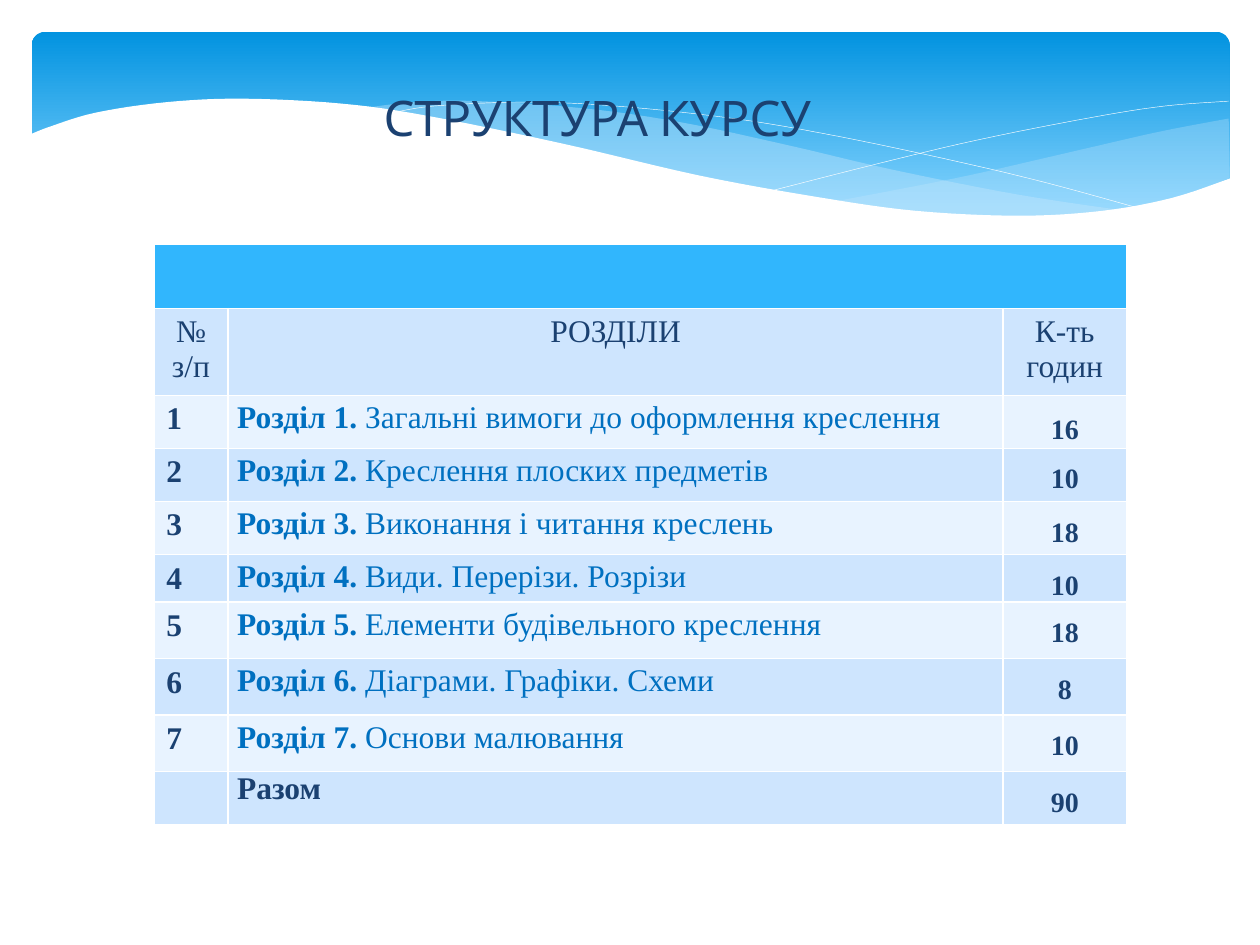
from lxml.etree import SubElement
from pptx import Presentation
from pptx.dml.color import RGBColor
from pptx.enum.shapes import MSO_SHAPE
from pptx.enum.text import MSO_ANCHOR, MSO_AUTO_SIZE, PP_ALIGN
from pptx.oxml.ns import qn
from pptx.util import Cm, Pt

COLORS = {
    "sky_top": "0293E0", "sky_low": "83D3FE", "fold": "C6E7FC", "white": "FFFFFF",
    "header": "31B6FD", "band_dark": "CEE5FE", "band_light": "E8F3FF",
    "navy": "1B4171", "blue": "0070C0",
}
SERIF = "Times New Roman"

RIGHT_FOLD = [
    [(24.13, 1.75), (22.76, 2.01), (21.23, 2.36), (19.15, 2.84), (17.88, 3.1), (16.15, 3.43)],
    [(16.15, 3.43), (17.27, 3.56), (18.59, 3.68), (20.04, 3.73), (21.29, 3.68),
     (22.35, 3.51), (23.29, 3.28), (24.15, 2.95)],
]
LEFT_FOLD = [
    [(22.05, 3.61), (19.86, 3.28), (17.3, 2.77), (15.34, 2.31), (13.11, 1.83),
     (11.18, 1.55), (9.02, 1.4), (7.7, 1.42), (6.63, 1.55)],
    [(6.63, 1.55), (8.05, 1.75), (9.63, 2.06), (11.84, 2.57), (14.2, 3.07),
     (15.88, 3.38), (17.37, 3.58), (19, 3.73), (20.4, 3.76), (22.05, 3.61)],
]
FALLING_LINE = [[(7.21, 1.65), (8.1, 1.5), (9.93, 1.42), (11.79, 1.5), (14.15, 1.75),
                 (16.26, 2.11), (18.67, 2.62), (20.47, 3.05), (22.4, 3.58)]]
RISING_LINE = [[(14.94, 3.2), (17.02, 2.67), (19.08, 2.18), (21.36, 1.73),
                (22.83, 1.5), (24.13, 1.4)]]
WHITE_WAVE = [
    [(24.18, 2.95), (22.99, 3.35), (21.59, 3.61), (19.91, 3.71), (17.81, 3.61),
     (15.82, 3.33), (13.46, 2.9), (10.72, 2.26), (8, 1.7), (6.25, 1.45),
     (4.27, 1.35), (2.72, 1.42), (1.3, 1.63), (0.38, 1.91), (-0.05, 2.08)],
    [(-0.05, 5.05), (24.18, 5.05)],
]

SECTIONS = [
    ("Загальні вимоги до оформлення креслення", 16),
    ("Креслення плоских предметів", 10),
    ("Виконання і читання креслень", 18),
    ("Види. Перерізи. Розрізи", 10),
    ("Елементи будівельного креслення", 18),
    ("Діаграми. Графіки. Схеми", 8),
    ("Основи малювання", 10),
]
COL_WIDTHS = [1.5, 15.62, 2.49]
ROW_HEIGHTS = [1.3, 1.75, 1.07, 1.07, 1.07, 0.95, 1.14, 1.14, 1.14, 1.07]

TIGHT = {"margin_left": Cm(0.18), "margin_right": Cm(0.18), "margin_top": 0, "margin_bottom": 0}
CENTER = {"alignment": PP_ALIGN.CENTER}
TOPIC = {"alignment": PP_ALIGN.JUSTIFY, "line_spacing": 1.15, "space_after": Pt(10)}
HOURS = {"alignment": PP_ALIGN.CENTER, "line_spacing": 1.5}
PLAIN = {"name": SERIF, "size": Pt(18), "bold": False}
BOLD = {**PLAIN, "bold": True}
SMALL = {**BOLD, "size": Pt(16)}


def apply(target, values):
    for name, value in values.items():
        setattr(target, name, value)


def rgb(name):
    return RGBColor.from_string(COLORS[name])


def paint(fill, name):
    fill.solid()
    fill.fore_color.rgb = rgb(name)


def add_run(p, text, font, color="navy"):
    r = p.add_run()
    r.text = text
    apply(r.font, font)
    r.font.color.rgb = rgb(color)


def smooth(points, steps=6):
    ends = [points[0], *points, points[-1]]
    curve = [points[0]]
    for a, b, c, d in zip(ends, ends[1:], ends[2:], ends[3:]):
        for i in range(1, steps + 1):
            t = i / steps
            curve.append(tuple(
                (2 * q + (s - o) * t + (2 * o - 5 * q + 4 * s - u) * t ** 2
                 + (3 * q - o - 3 * s + u) * t ** 3) / 2
                for o, q, s, u in zip(a, b, c, d)))
    return curve


def add_wave(shapes, left, top, edges, closed=True):
    points = [(Cm(left + x), Cm(top + y)) for edge in edges for x, y in smooth(edge)]
    builder = shapes.build_freeform(*points[0])
    builder.add_line_segments(points[1:], close=closed)
    sp = builder.convert_to_shape()
    sp.shadow.inherit = False
    return sp


def add_banner(shapes, left, top, width, height):
    sp = shapes.add_shape(MSO_SHAPE.ROUNDED_RECTANGLE, Cm(left), Cm(top), Cm(width), Cm(height))
    sp.adjustments[0] = 0.07
    sp.shadow.inherit = False
    sp.line.fill.background()
    sp.fill.gradient()
    sp.fill.gradient_angle = 270
    for stop, (position, name) in zip(sp.fill.gradient_stops, [(0, "sky_top"), (0.9, "sky_low")]):
        stop.position = position
        stop.color.rgb = rgb(name)

    for edges, opacity in [(RIGHT_FOLD, 29), (LEFT_FOLD, 40)]:
        fold = add_wave(shapes, left, top, edges)
        paint(fold.fill, "fold")
        fold.line.fill.background()
        color = fold.fill._xPr.find(qn("a:solidFill"))[0]
        SubElement(color, qn("a:alpha"), val=str(opacity * 1000))

    for edges in [FALLING_LINE, RISING_LINE]:
        line = add_wave(shapes, left, top, edges, closed=False)
        line.fill.background()
        paint(line.line.fill, "white")
        line.line.width = Pt(0.25)

    wave = add_wave(shapes, left, top, WHITE_WAVE)
    paint(wave.fill, "white")
    wave.line.fill.background()


def add_title(shapes, left, top, width, height):
    tf = shapes.add_textbox(Cm(left), Cm(top), Cm(width), Cm(height)).text_frame
    apply(tf, {"word_wrap": True, "auto_size": MSO_AUTO_SIZE.SHAPE_TO_FIT_TEXT})
    p = tf.paragraphs[0]
    apply(p, CENTER)
    add_run(p, "СТРУКТУРА КУРСУ", {"name": "Cabin", "size": Pt(28)})


def fill_cell(cell, runs, para=None, box=None):
    apply(cell, box or {})
    p = cell.text_frame.paragraphs[0]
    apply(p, para or {})
    for run in runs:
        add_run(p, *run)


def add_course_table(shapes, left, top):
    table = shapes.add_table(len(ROW_HEIGHTS), len(COL_WIDTHS), Cm(left), Cm(top),
                             Cm(sum(COL_WIDTHS)), Cm(sum(ROW_HEIGHTS))).table
    for column, width in zip(table.columns, COL_WIDTHS):
        column.width = Cm(width)
    for i, (row, height) in enumerate(zip(table.rows, ROW_HEIGHTS)):
        row.height = Cm(height)
        for cell in row.cells:
            paint(cell.fill, "header" if i == 0 else "band_dark" if i % 2 else "band_light")

    table.cell(0, 0).merge(table.cell(0, 2))
    for j, label in enumerate(["№ з/п", "РОЗДІЛИ", "К-ть годин"]):
        fill_cell(table.cell(1, j), [(label, PLAIN)], CENTER)
    for n, (topic, hours) in enumerate(SECTIONS, 1):
        fill_cell(table.cell(n + 1, 0), [(str(n), BOLD)])
        fill_cell(table.cell(n + 1, 1),
                  [(f"Розділ {n}. ", BOLD, "blue"), (topic, PLAIN, "blue")], TOPIC, TIGHT)
        fill_cell(table.cell(n + 1, 2), [(str(hours), SMALL)], HOURS, TIGHT)
    apply(table.cell(2, 2), {"vertical_anchor": MSO_ANCHOR.MIDDLE})
    apply(table.cell(2, 2).text_frame.paragraphs[0], {"space_after": Pt(10)})

    last = len(ROW_HEIGHTS) - 1
    total = sum(hours for _, hours in SECTIONS)
    fill_cell(table.cell(last, 1), [("Разом", BOLD)], box=TIGHT)
    fill_cell(table.cell(last, 2), [(str(total), SMALL)], HOURS, TIGHT)


def main():
    prs = Presentation()
    apply(prs, {"slide_width": Cm(25.4), "slide_height": Cm(19.05)})
    s = prs.slides.add_slide(prs.slide_layouts[6])
    add_banner(s.shapes, 0.64, 0.64, 24.15, 3.96)
    add_course_table(s.shapes, 3.1, 4.92)
    add_title(s.shapes, 5.69, 1.63, 12.7, 1.45)
    prs.save("out.pptx")


if __name__ == "__main__":
    main()
